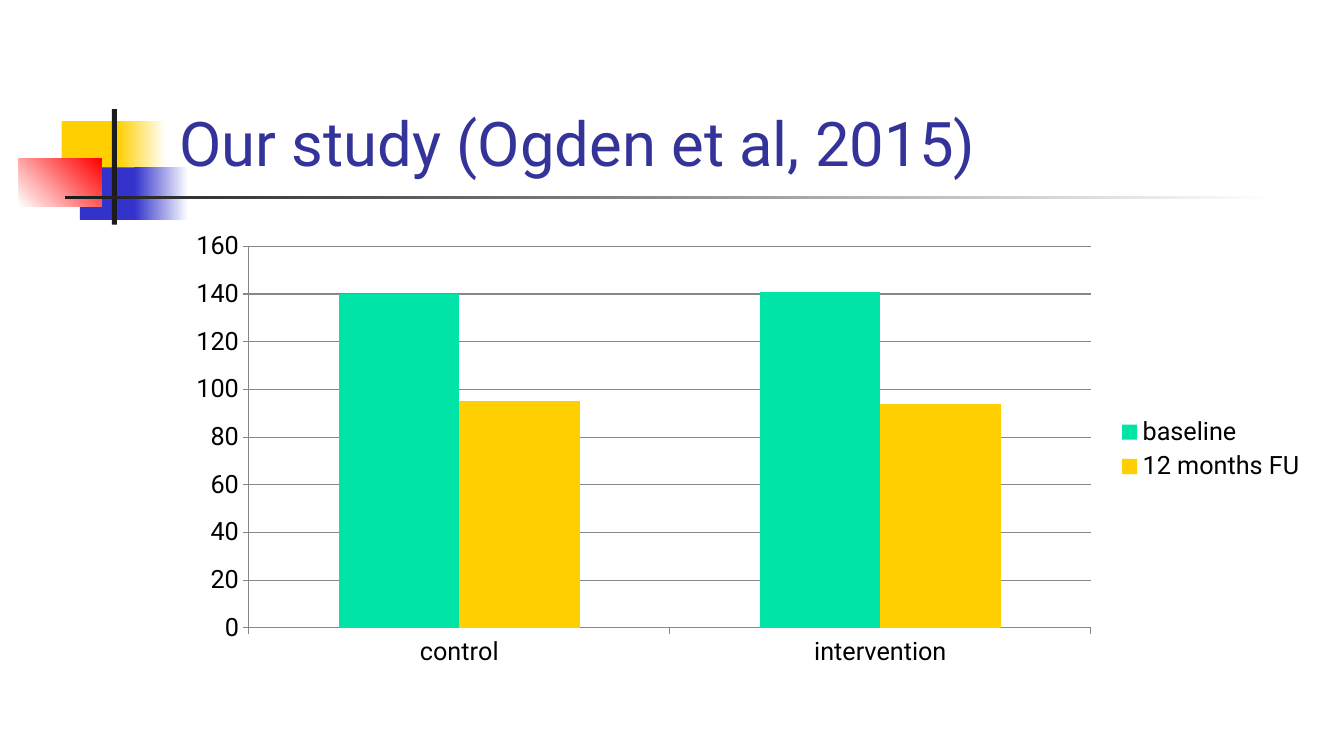
from pptx import Presentation
from pptx import util as u
from pptx.chart.data import CategoryChartData
from pptx.dml.color import RGBColor
from pptx.enum import chart as charts, shapes, text

FONT = "Roboto"
YELLOW, BLUE, RED, DARK, WHITE = "FFCF01", "3333CC", "FF0000", "1C1C1C", "FFFFFF"
GREEN, TITLE_COLOR, BLACK, GREY = "00E4A8", "333399", "000000", "878787"


def color(hex_value):
    return RGBColor.from_string(hex_value)


class StudySlide:
    def __init__(self, presentation):
        self.slide = presentation.slides.add_slide(presentation.slide_layouts[5])

    def block(self, left, top, width, height, *colors, angle=0):
        shape = self.slide.shapes.add_shape(
            shapes.MSO_SHAPE.RECTANGLE,
            u.Pt(left), u.Pt(top), u.Pt(width), u.Pt(height))
        shape.shadow.inherit = False
        shape.line.fill.background()
        if len(colors) == 1:
            shape.fill.solid()
            shape.fill.fore_color.rgb = color(colors[0])
        else:
            shape.fill.gradient()
            shape.fill.gradient_angle = angle
            for stop, value in zip(shape.fill.gradient_stops, colors):
                stop.color.rgb = color(value)

    def title(self, words, left, top, width, height):
        title = self.slide.shapes.title
        title.left, title.top = u.Pt(left), u.Pt(top)
        title.width, title.height = u.Pt(width), u.Pt(height)
        frame = title.text_frame
        frame.text = words
        frame.word_wrap = True
        frame.auto_size = text.MSO_AUTO_SIZE.NONE
        frame.vertical_anchor = text.MSO_ANCHOR.BOTTOM
        paragraph = frame.paragraphs[0]
        paragraph.alignment = text.PP_ALIGN.LEFT
        font = paragraph.runs[0].font
        font.name, font.size = FONT, u.Pt(44)
        font.color.rgb = color(TITLE_COLOR)
        title.element.getparent().append(title.element)

    def column_chart(self, categories, series, left, top, width, height):
        data = CategoryChartData()
        data.categories = categories
        for name, values, _ in series:
            data.add_series(name, values)
        chart = self.slide.shapes.add_chart(
            charts.XL_CHART_TYPE.COLUMN_CLUSTERED,
            u.Pt(left), u.Pt(top), u.Pt(width), u.Pt(height), data).chart
        chart.has_title = False
        chart.font.name, chart.font.size = FONT, u.Pt(18)
        chart.font.color.rgb = color(BLACK)
        chart.has_legend = True
        chart.legend.position = charts.XL_LEGEND_POSITION.RIGHT
        chart.legend.include_in_layout = False

        plot = chart.plots[0]
        plot.gap_width, plot.overlap = 150, 0
        plot.vary_by_categories = False
        for column, (_, _, fill) in zip(plot.series, series):
            column.format.fill.solid()
            column.format.fill.fore_color.rgb = color(fill)

        value_axis = chart.value_axis
        value_axis.minimum_scale, value_axis.maximum_scale = 0, 160
        value_axis.major_unit = 20
        value_axis.has_major_gridlines = True
        for axis in (chart.category_axis, value_axis):
            axis.major_tick_mark = charts.XL_TICK_MARK.OUTSIDE
        for item in (chart.category_axis, value_axis, value_axis.major_gridlines):
            item.format.line.color.rgb = color(GREY)
            item.format.line.width = u.Pt(0.75)


def main():
    presentation = Presentation()
    presentation.slide_width, presentation.slide_height = u.Pt(960), u.Pt(540)
    study = StudySlide(presentation)
    study.block(44, 86.5, 46, 37.5, YELLOW)
    study.block(84, 86.5, 34.5, 37.5, YELLOW, WHITE)
    study.block(57, 119.5, 44.5, 37.5, BLUE)
    study.block(96, 119.5, 38.5, 37.5, BLUE, WHITE)
    study.block(13.5, 113.5, 59, 34, WHITE, RED, angle=45)
    study.block(80, 78, 3.5, 82.5, DARK)
    study.block(46.5, 140, 864, 2.5, DARK, WHITE)
    study.title("Our study (Ogden et al, 2015)", 121, 16.5, 818, 115)
    study.column_chart(
        ["control", "intervention"],
        [("baseline", (140, 141), GREEN), ("12 months FU", (95, 94), YELLOW)],
        124, 159, 816, 324)
    presentation.save("out.pptx")


if __name__ == "__main__":
    main()
